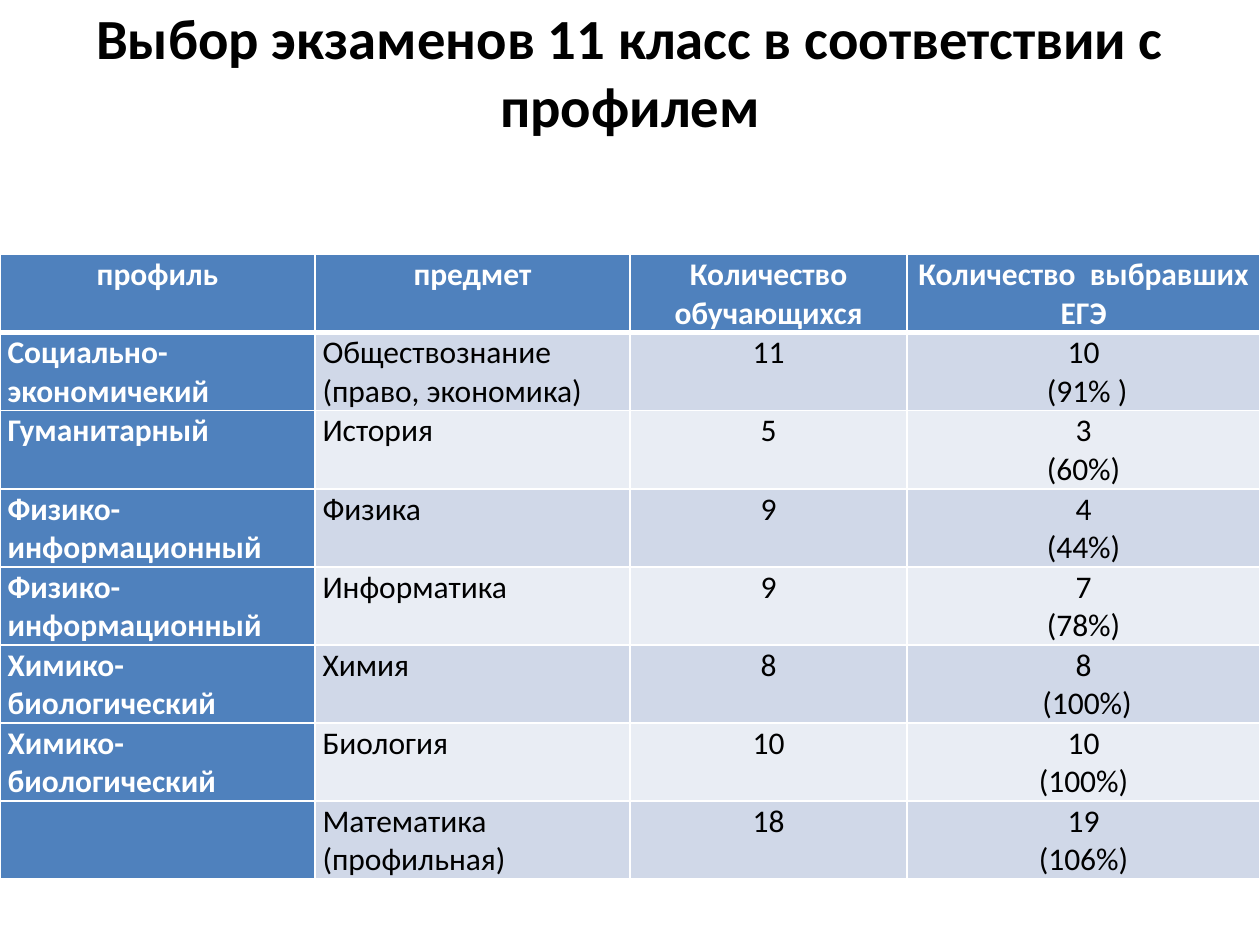
import pptx
import pptx.dml.color
import pptx.enum.text
import pptx.oxml
import pptx.oxml.ns
import pptx.util

Pt = pptx.util.Pt
ALIGN = pptx.enum.text.PP_ALIGN
ANCHOR = pptx.enum.text.MSO_ANCHOR

BLUE, WHITE, BLACK = "4F81BD", "FFFFFF", "000000"
BANDS = ("D0D8E8", "E9EDF4")
COLUMN_WIDTHS = (180, 180, 158.4, 201.6)
ROW_HEIGHT = 44.64
HEADER = ("профиль", "предмет", "Количество обучающихся", "Количество  выбравших ЕГЭ")
EXAMS = (
    ("Социально-экономичекий", "Обществознание (право, экономика)", "11", "10\n (91% )"),
    ("Гуманитарный", "История", "5", "3\n(60%)"),
    ("Физико-информационный", "Физика", "9", "4\n(44%)"),
    ("Физико-информационный", "Информатика", "9", "7\n(78%)"),
    ("Химико-биологический", "Химия", "8", "8\n (100%)"),
    ("Химико-биологический", "Биология", "10", "10\n(100%)"),
    ("", "Математика (профильная)", "18", "19\n(106%)"),
)


def rgb(value):
    """Turn a hex string into a colour."""
    return pptx.dml.color.RGBColor.from_string(value)


def write(tf, text, size=18, color=BLACK, bold=False, align=ALIGN.LEFT):
    """Fill a text frame, one paragraph for each line of text."""
    for i, line in enumerate(text.split("\n")):
        p = tf.add_paragraph() if i else tf.paragraphs[0]
        p.alignment = align
        if not line:
            p.font.size = Pt(size)
            continue
        r = p.add_run()
        r.text = line
        r.font.name = "Calibri"
        r.font.size = Pt(size)
        r.font.bold = bold
        r.font.color.rgb = rgb(color)


def set_borders(cell, **widths):
    """Draw white cell borders, with widths in points keyed by side."""
    tc_pr = cell._tc.get_or_add_tcPr()
    for side in ("L", "R", "T", "B"):
        tc_pr.append(pptx.oxml.parse_xml(
            f'<a:ln{side} {pptx.oxml.ns.nsdecls("a")} w="{Pt(widths.get(side, 1))}">'
            f'<a:solidFill><a:srgbClr val="{WHITE}"/></a:solidFill></a:ln{side}>'))


def add_title(s, left, top, width, height):
    """Place the slide title in the given box."""
    sp = s.shapes.add_textbox(Pt(left), Pt(top), Pt(width), Pt(height))
    tf = sp.text_frame
    tf.word_wrap = True
    tf.vertical_anchor = ANCHOR.MIDDLE
    write(tf, "Выбор экзаменов 11 класс в соответствии с профилем",
          size=32.4, bold=True, align=ALIGN.CENTER)


def add_exam_table(s, left, top):
    """Place the table of exam choices with its corner at the given point."""
    rows = (HEADER,) + EXAMS
    table = s.shapes.add_table(
        len(rows), len(HEADER), Pt(left), Pt(top),
        Pt(sum(COLUMN_WIDTHS)), Pt(ROW_HEIGHT * len(rows))).table
    for column, width in zip(table.columns, COLUMN_WIDTHS):
        column.width = Pt(width)
    for i, texts in enumerate(rows):
        table.rows[i].height = Pt(ROW_HEIGHT)
        for j, text in enumerate(texts):
            cell = table.cell(i, j)
            cell.margin_left = cell.margin_right = Pt(4.32)
            cell.margin_top, cell.margin_bottom = Pt(0.72), Pt(0)
            set_borders(cell, T=3 if i == 1 else 1, B=3 if i == 0 else 1)
            heading = i == 0 or j == 0
            cell.fill.solid()
            cell.fill.fore_color.rgb = rgb(BLUE if heading else BANDS[(i - 1) % 2])
            write(cell.text_frame, text, color=WHITE if heading else BLACK, bold=heading,
                  align=ALIGN.CENTER if i == 0 or j > 1 else ALIGN.LEFT)


def main():
    """Build and save the slide."""
    prs = pptx.Presentation()
    prs.slide_width, prs.slide_height = Pt(720), Pt(540)
    s = prs.slides.add_slide(prs.slide_layouts[6])
    add_title(s, 36, 9.36, 648, 62.64)
    add_exam_table(s, 0, 145.44)
    prs.save("out.pptx")


if __name__ == "__main__":
    main()
